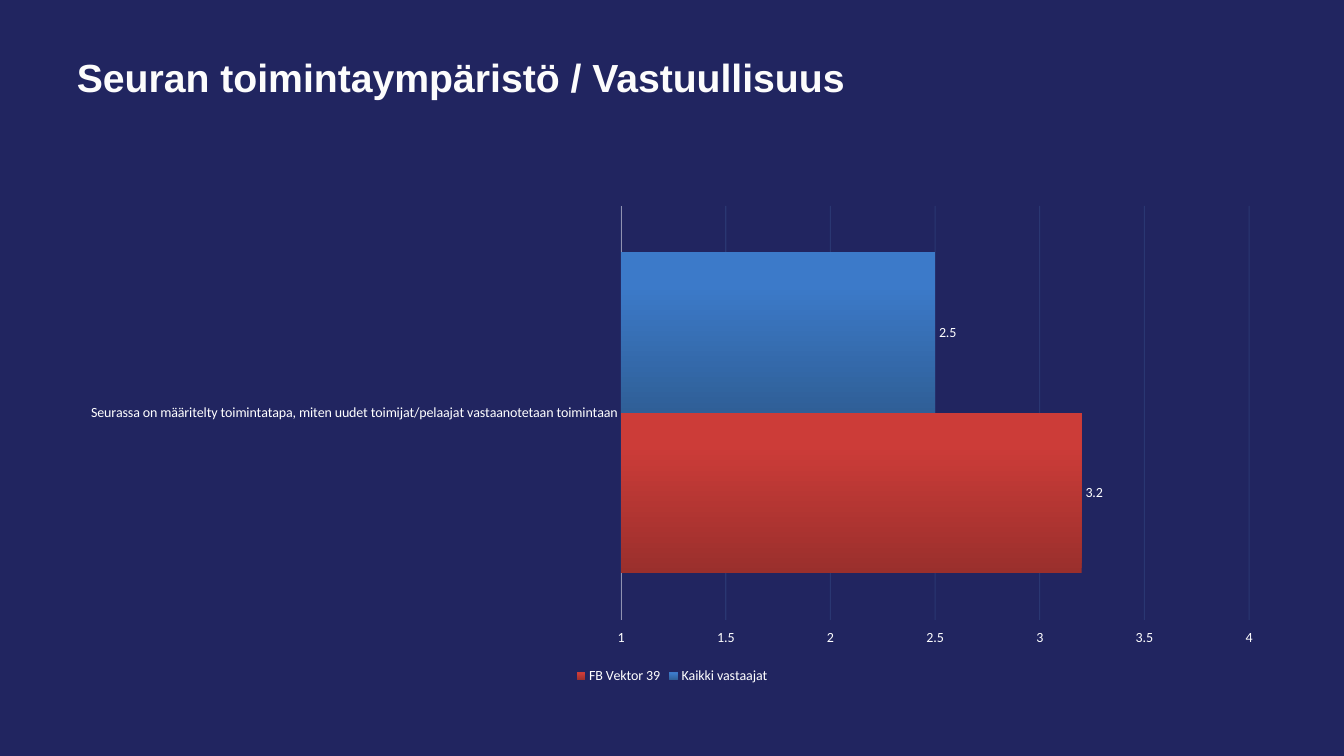
from lxml.etree import SubElement
from pptx import Presentation
from pptx.chart.data import CategoryChartData
from pptx.dml.color import RGBColor
from pptx.enum.chart import XL_AXIS_CROSSES as Crosses, XL_CHART_TYPE as ChartType
from pptx.enum.chart import XL_LABEL_POSITION as LabelPos, XL_LEGEND_POSITION as LegendPos
from pptx.enum.chart import XL_TICK_LABEL_POSITION as TickLabel, XL_TICK_MARK as Tick
from pptx.enum.text import MSO_ANCHOR as Anchor
from pptx.oxml.ns import qn
from pptx.util import Pt

PX = 914400 / 100.8
COLORS = {
    "bg": "212560", "title": "FCFCFC", "text": "FFFFFF", "grid": "4F81BD", "axis": "9092B0",
    "blue": "3C7AC9", "blue_dark": "2F5F97", "red": "CC3C38", "red_dark": "9A2F2C",
}
CATEGORY = "Seurassa on määritelty toimintatapa, miten uudet toimijat/pelaajat vastaanotetaan toimintaan"
SERIES = [("Kaikki vastaajat", 2.5, "blue"), ("FB Vektor 39", 3.2, "red")]
PLOT = {"x": 0.458, "y": 0.02, "w": 0.519, "h": 0.842}


def px(*values):
    return [round(v * PX) for v in values]


def color(name):
    return RGBColor.from_string(COLORS[name])


def apply(obj, formats):
    for key, value in formats.items():
        setattr(obj, key, value)


def set_font(font, name, size, tint, bold=False):
    apply(font, {"name": name, "size": Pt(size), "bold": bold})
    font.color.rgb = color(tint)


def set_line(line, tint, alpha=None):
    line.width = Pt(0.75)
    line.color.rgb = color(tint)
    if alpha:
        clr = next(line._ln.iter(qn("a:srgbClr")))
        SubElement(clr, qn("a:alpha"), val=str(alpha * 1000))


def add_title(s, text, box):
    tf = s.shapes.add_textbox(*px(*box)).text_frame
    apply(tf, {"word_wrap": True, "vertical_anchor": Anchor.MIDDLE})
    r = tf.paragraphs[0].add_run()
    r.text = text
    set_font(r.font, "Arial", 28, "title", True)


def shade_bars(series, tint):
    fill = series.format.fill
    fill.gradient()
    fill.gradient_angle = 90
    for stop, name, pos in zip(fill.gradient_stops, (tint + "_dark", tint), (0, 0.8)):
        stop.color.rgb = color(name)
        stop.position = pos
    series.invert_if_negative = False


def style_axes(chart):
    cat, val = chart.category_axis, chart.value_axis
    for axis in (cat, val):
        apply(axis, {"major_tick_mark": Tick.NONE, "minor_tick_mark": Tick.NONE})
    apply(cat, {"reverse_order": True, "crosses": Crosses.MAXIMUM})
    set_line(cat.format.line, "axis")
    apply(val, {"minimum_scale": 1, "maximum_scale": 4, "major_unit": 0.5,
                "has_major_gridlines": True, "tick_label_position": TickLabel.HIGH})
    val.format.line.fill.background()
    set_line(val.major_gridlines.format.line, "grid", 20)


def place_plot(chart):
    area = chart._chartSpace.chart.plotArea
    for old in area.findall(qn("c:layout")):
        area.remove(old)
    layout = area.makeelement(qn("c:layout"))
    area.insert(0, layout)
    manual = SubElement(layout, qn("c:manualLayout"))
    SubElement(manual, qn("c:layoutTarget"), val="inner")
    for side in "xy":
        SubElement(manual, qn(f"c:{side}Mode"), val="edge")
    for side, share in PLOT.items():
        SubElement(manual, qn(f"c:{side}"), val=str(share))


def add_bar_chart(s, box):
    data = CategoryChartData()
    data.categories = [CATEGORY]
    for name, value, _ in SERIES:
        data.add_series(name, [value])
    chart = s.shapes.add_chart(ChartType.BAR_CLUSTERED, *px(*box), data).chart
    apply(chart, {"has_title": False, "has_legend": True})
    apply(chart.legend, {"position": LegendPos.BOTTOM, "include_in_layout": False})
    set_font(chart.font, "Calibri", 10, "text")
    plot = chart.plots[0]
    apply(plot, {"gap_width": 58, "overlap": 0, "vary_by_categories": False,
                 "has_data_labels": True})
    apply(plot.data_labels, {"show_value": True, "position": LabelPos.OUTSIDE_END})
    for series, (_, _, tint) in zip(plot.series, SERIES):
        shade_bars(series, tint)
    style_axes(chart)
    place_plot(chart)


def main():
    prs = Presentation()
    prs.slide_width, prs.slide_height = px(1344, 756)
    s = prs.slides.add_slide(prs.slide_layouts[6])
    s.background.fill.solid()
    s.background.fill.fore_color.rgb = color("bg")
    add_title(s, "Seuran toimintaympäristö / Vastuullisuus", (67, 37, 1210, 80))
    add_bar_chart(s, (67, 196, 1210, 492))
    prs.save("out.pptx")


if __name__ == "__main__":
    main()
